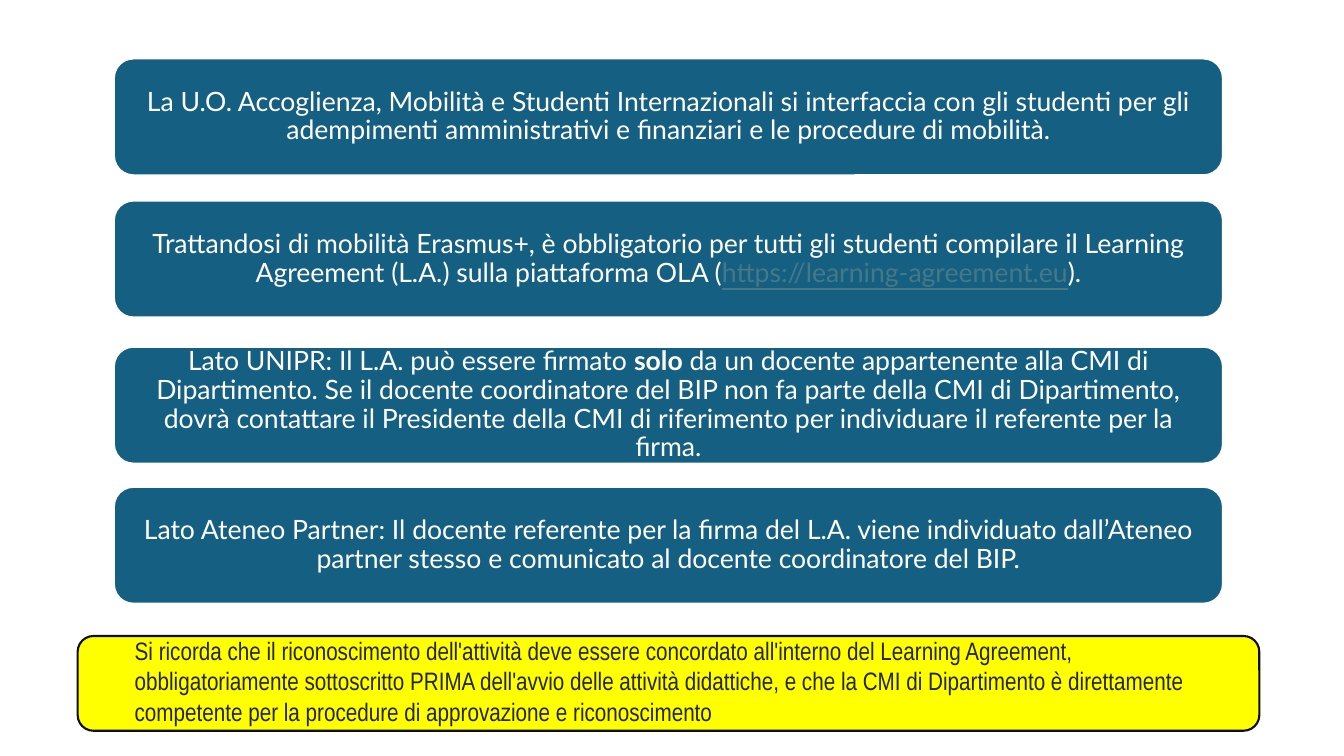
from dataclasses import dataclass

from pptx import Presentation
from pptx.dml.color import RGBColor as Color
from pptx.enum.shapes import MSO_SHAPE as Preset
from pptx.enum.text import MSO_ANCHOR as Anchor, PP_ALIGN as Align
from pptx.util import Inches, Pt


@dataclass(frozen=True)
class Theme:
    card: str = "156082"
    card_text: str = "FFFFFF"
    link: str = "467886"
    note: str = "FFFF00"
    note_line: str = "0D0D0D"
    note_text: str = "242424"
    card_font: str = "Lato"
    note_font: str = "Arial Narrow"
    card_size: float = 19
    note_size: float = 18
    line_width: float = 1.5


def add_text(paragraph, text, font, size, color, bold=False, underline=False):
    run = paragraph.add_run()
    run.text = text
    run.font.name = font
    run.font.size = Pt(size)
    run.font.bold = bold
    run.font.underline = underline
    run.font.color.rgb = Color.from_string(color)


class SlideBuilder:
    """Draws the cards and the note of one slide in a shared theme."""

    def __init__(self, slide, theme):
        self.slide = slide
        self.theme = theme

    def box(self, bounds, fill, line, margins, align):
        shape = self.slide.shapes.add_shape(
            Preset.ROUNDED_RECTANGLE, *(Inches(length) for length in bounds))
        shape.shadow.inherit = False
        shape.fill.solid()
        shape.fill.fore_color.rgb = Color.from_string(fill)
        shape.line.color.rgb = Color.from_string(line)
        shape.line.width = Pt(self.theme.line_width)
        frame = shape.text_frame
        frame.word_wrap = True
        frame.vertical_anchor = Anchor.MIDDLE
        (frame.margin_left, frame.margin_top,
         frame.margin_right, frame.margin_bottom) = map(Inches, margins)
        paragraph = frame.paragraphs[0]
        paragraph.alignment = align
        return paragraph

    def card(self, top, runs):
        theme = self.theme
        paragraph = self.box((1.13, top, 11, 1.16), theme.card, theme.card_text,
                             (0.08,) * 4, Align.CENTER)
        paragraph.line_spacing = 0.9
        for text, style in runs:
            add_text(paragraph, text, theme.card_font, theme.card_size,
                     **{"color": theme.card_text, **style})

    def note(self, text):
        theme = self.theme
        paragraph = self.box((0.77, 6.31, 11.72, 0.94), theme.note, theme.note_line,
                             (0.52, 0, 0.16, 0.05), Align.LEFT)
        add_text(paragraph, text, theme.note_font, theme.note_size, theme.note_text)


def main():
    theme = Theme()
    cards = [
        (0.58, [("La U.O. Accoglienza, Mobilità e Studenti Internazionali si interfaccia "
                 "con gli studenti per gli adempimenti amministrativi e finanziari "
                 "e le procedure di mobilità.", {})]),
        (1.99, [("Trattandosi di mobilità Erasmus+, è obbligatorio per tutti gli studenti "
                 "compilare il Learning Agreement (L.A.) sulla piattaforma OLA (", {}),
                ("https://learning-agreement.eu", {"color": theme.link, "underline": True}),
                (").", {})]),
        (3.44, [("Lato UNIPR: Il L.A. può essere firmato ", {}),
                ("solo", {"bold": True}),
                (" da un docente appartenente alla CMI di Dipartimento. Se il docente "
                 "coordinatore del BIP non fa parte della CMI di Dipartimento, dovrà "
                 "contattare il Presidente della CMI di riferimento per individuare "
                 "il referente per la firma.", {})]),
        (4.83, [("Lato Ateneo Partner: Il docente referente per la firma del L.A. viene "
                 "individuato dall’Ateneo partner stesso e comunicato al docente "
                 "coordinatore del BIP.", {})]),
    ]
    presentation = Presentation()
    presentation.slide_width = Inches(13.33)
    presentation.slide_height = Inches(7.5)
    slide = presentation.slides.add_slide(presentation.slide_layouts[6])
    builder = SlideBuilder(slide, theme)
    for top, runs in cards:
        builder.card(top, runs)
    builder.note("Si ricorda che il riconoscimento dell'attività deve essere concordato "
                 "all'interno del Learning Agreement, obbligatoriamente sottoscritto PRIMA "
                 "dell'avvio delle attività didattiche, e che la CMI di Dipartimento è "
                 "direttamente competente per la procedure di approvazione e riconoscimento")
    presentation.save("out.pptx")


if __name__ == "__main__":
    main()
